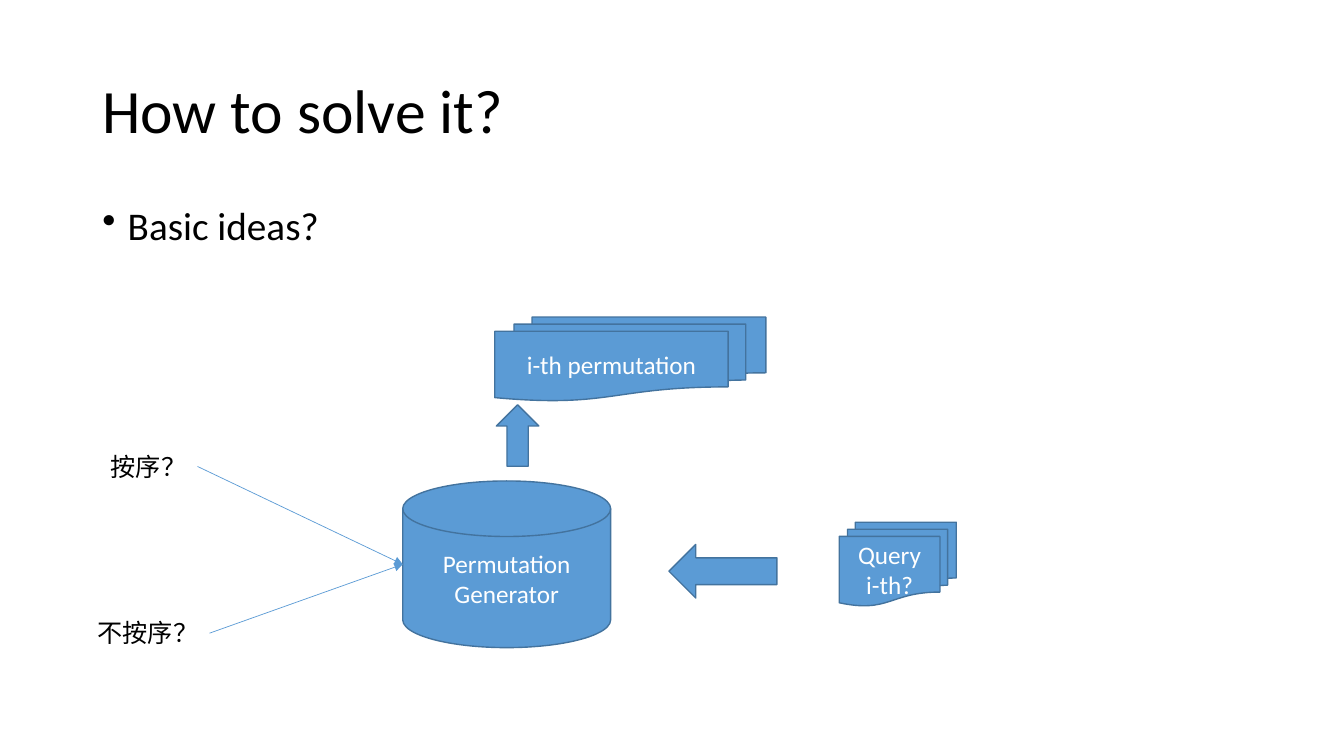
from dataclasses import dataclass

from lxml.etree import SubElement
from pptx import Presentation
from pptx.dml.color import RGBColor
from pptx.enum.shapes import MSO_CONNECTOR, MSO_SHAPE
from pptx.enum.text import MSO_ANCHOR, MSO_AUTO_SIZE, PP_ALIGN
from pptx.oxml.ns import qn
from pptx.shapes.autoshape import Shape
from pptx.slide import Slide
from pptx.text.text import _Paragraph
from pptx.util import Cm, Pt


@dataclass(frozen=True)
class Theme:
    font: str = "Calibri"
    ink: RGBColor = RGBColor(0x00, 0x00, 0x00)
    paper: RGBColor = RGBColor(0xFF, 0xFF, 0xFF)
    accent: RGBColor = RGBColor(0x5B, 0x9B, 0xD5)
    outline: RGBColor = RGBColor(0x43, 0x73, 0x9E)
    title_size: Pt = Pt(44)
    body_size: Pt = Pt(28)
    label_size: Pt = Pt(18)
    outline_width: Pt = Pt(1)
    connector_width: Pt = Pt(0.5)


@dataclass(frozen=True)
class Box:
    left: float
    top: float
    width: float
    height: float

    def lengths(self) -> tuple[Cm, Cm, Cm, Cm]:
        return Cm(self.left), Cm(self.top), Cm(self.width), Cm(self.height)


@dataclass(frozen=True)
class Node:
    kind: MSO_SHAPE
    box: Box
    text: str = ""


@dataclass(frozen=True)
class Label:
    text: str
    box: Box


THEME = Theme()
TITLE = Label("How to solve it?", Box(2.33, 1.01, 29.21, 3.68))
BODY = Label("Basic ideas?", Box(2.33, 5.07, 29.21, 12.09))
GENERATOR = Node(MSO_SHAPE.FLOWCHART_MAGNETIC_DISK, Box(10.15, 12.12, 5.24, 4.2), "Permutation\nGenerator")
NODES = (
    Node(MSO_SHAPE.FLOWCHART_MULTIDOCUMENT, Box(21.15, 13.16, 2.95, 2.11), "Query\ni-th?"),
    Node(MSO_SHAPE.LEFT_ARROW, Box(16.86, 13.72, 2.72, 1.35)),
    Node(MSO_SHAPE.UP_ARROW, Box(12.51, 10.2, 1.07, 1.55)),
    Node(MSO_SHAPE.FLOWCHART_MULTIDOCUMENT, Box(12.47, 7.99, 6.83, 2.11), "i-th permutation"),
)
ORDER_LABELS = (
    Label("按序？", Box(2.54, 11.24, 2.44, 1.03)),
    Label("不按序？", Box(2.21, 15.44, 3.07, 1.03)),
)


def style_font(paragraph: _Paragraph, size: Pt, color: RGBColor) -> None:
    paragraph.font.name = THEME.font
    paragraph.font.size = size
    paragraph.font.color.rgb = color


def add_label(slide: Slide, label: Label, size: Pt) -> Shape:
    shape = slide.shapes.add_textbox(*label.box.lengths())
    shape.text_frame.word_wrap = True
    shape.text_frame.text = label.text
    style_font(shape.text_frame.paragraphs[0], size, THEME.ink)
    return shape


def add_title(slide: Slide) -> None:
    frame = add_label(slide, TITLE, THEME.title_size).text_frame
    frame.vertical_anchor = MSO_ANCHOR.MIDDLE
    frame.paragraphs[0].line_spacing = 0.9


def add_body(slide: Slide) -> None:
    paragraph = add_label(slide, BODY, THEME.body_size).text_frame.paragraphs[0]
    paragraph.line_spacing = 0.9
    paragraph.space_before = Pt(10)
    properties = paragraph._p.get_or_add_pPr()
    indent = Cm(0.64)
    properties.set("marL", str(indent))
    properties.set("indent", str(-indent))
    bullet = SubElement(properties, qn("a:buChar"), char="•")
    properties.find(qn("a:defRPr")).addprevious(bullet)


def add_node(slide: Slide, node: Node) -> Shape:
    shape = slide.shapes.add_shape(node.kind, *node.box.lengths())
    shape.shadow.inherit = False
    shape.fill.solid()
    shape.fill.fore_color.rgb = THEME.accent
    shape.line.color.rgb = THEME.outline
    shape.line.width = THEME.outline_width
    if node.text:
        shape.text_frame.text = node.text
        shape.text_frame.vertical_anchor = MSO_ANCHOR.MIDDLE
        for paragraph in shape.text_frame.paragraphs:
            paragraph.alignment = PP_ALIGN.CENTER
            style_font(paragraph, THEME.label_size, THEME.paper)
    return shape


def add_order_label(slide: Slide, label: Label) -> Shape:
    shape = add_label(slide, label, THEME.label_size)
    shape.text_frame.word_wrap = False
    shape.text_frame.auto_size = MSO_AUTO_SIZE.SHAPE_TO_FIT_TEXT
    return shape


def add_arrow(slide: Slide, source: Shape, target: Shape) -> None:
    target_middle = target.top + target.height // 2
    connector = slide.shapes.add_connector(
        MSO_CONNECTOR.STRAIGHT, source.left + source.width, source.top, target.left, target_middle
    )
    connector.begin_connect(source, 3)
    connector.line.color.rgb = THEME.accent
    connector.line.width = THEME.connector_width
    SubElement(connector.line._get_or_add_ln(), qn("a:tailEnd"), type="triangle")
    SubElement(connector._element.spPr, qn("a:effectLst"))


def main() -> None:
    """Build the permutation generator slide and save it."""
    presentation = Presentation()
    presentation.slide_width = Cm(33.87)
    presentation.slide_height = Cm(19.05)
    slide = presentation.slides.add_slide(presentation.slide_layouts[6])
    add_title(slide)
    add_body(slide)
    generator = add_node(slide, GENERATOR)
    for node in NODES:
        add_node(slide, node)
    order_shapes = [add_order_label(slide, label) for label in ORDER_LABELS]
    for order_shape in order_shapes:
        add_arrow(slide, order_shape, generator)
    presentation.save("out.pptx")


if __name__ == "__main__":
    main()
